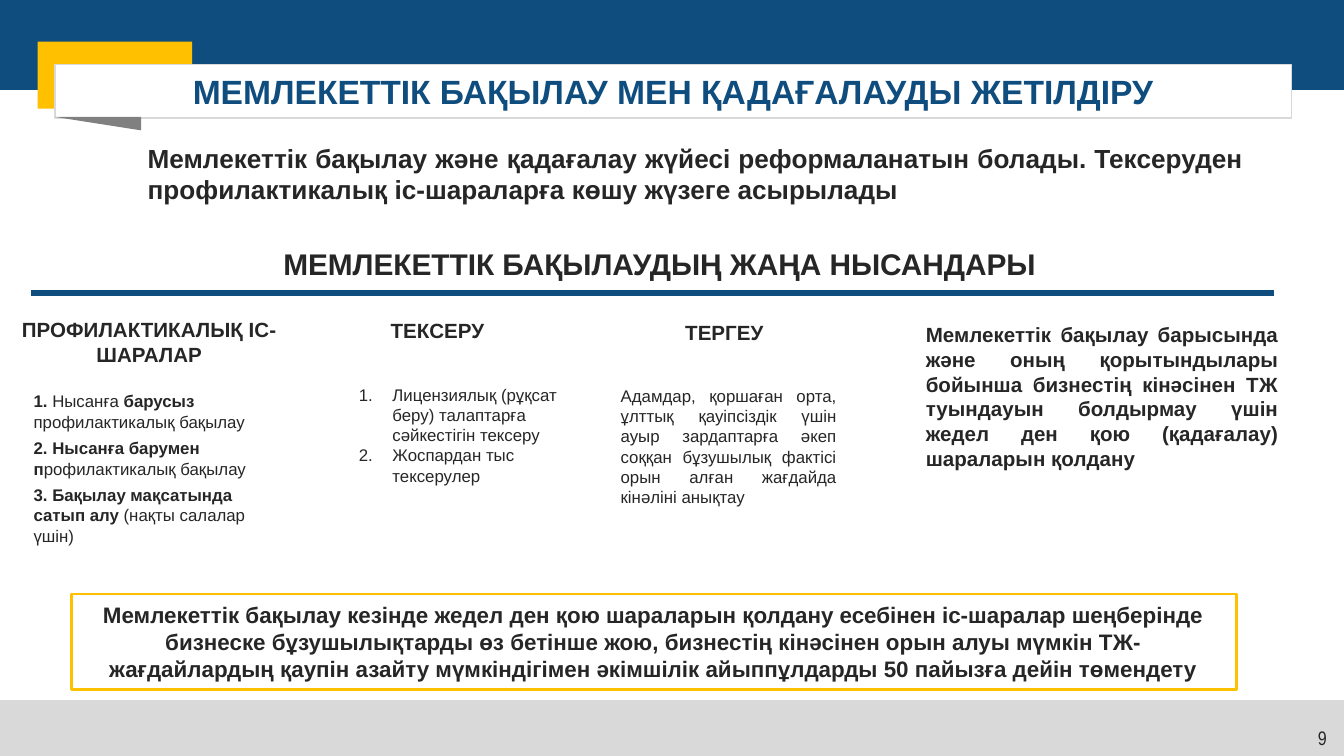
from dataclasses import dataclass

from lxml import etree
from pptx import Presentation
from pptx.dml.color import RGBColor
from pptx.enum.shapes import MSO_CONNECTOR, MSO_SHAPE
from pptx.enum.text import MSO_ANCHOR, MSO_AUTO_SIZE, PP_ALIGN
from pptx.oxml.ns import qn
from pptx.util import Inches, Pt

LEFT, CENTER, RIGHT, JUSTIFY = PP_ALIGN.LEFT, PP_ALIGN.CENTER, PP_ALIGN.RIGHT, PP_ALIGN.JUSTIFY
TOP, MIDDLE = MSO_ANCHOR.TOP, MSO_ANCHOR.MIDDLE
RECTANGLE, TRIANGLE = MSO_SHAPE.RECTANGLE, MSO_SHAPE.RIGHT_TRIANGLE
STRAIGHT = MSO_CONNECTOR.STRAIGHT
TWO_CONTENT_LAYOUT = 3
SLIDE_WIDTH = 10
SLIDE_HEIGHT = SLIDE_WIDTH * 9 / 16


@dataclass(frozen=True)
class Theme:
    blue: str = "104D7F"
    yellow: str = "FFC000"
    light_gray: str = "D9D9D9"
    dark_gray: str = "808080"
    white: str = "FFFFFF"
    text: str = "262626"
    font: str = "Arial"
    number_font: str = "Arial Narrow"
    title: float = 18
    section: float = 16
    lead: float = 14
    callout: float = 12
    heading: float = 11
    number: float = 10.5
    body: float = 9


@dataclass(frozen=True)
class Box:
    left: float
    top: float
    width: float
    height: float

    def inner(self, left, top, width, height):
        return Box(self.left + left, self.top + top, width, height)

    def lengths(self):
        return [Inches(value) for value in (self.left, self.top, self.width, self.height)]


THEME = Theme()


def color(value):
    return RGBColor.from_string(value)


def place(shape, box):
    shape.left, shape.top, shape.width, shape.height = box.lengths()


def add_block(slide, box, fill=None, line=None, line_width=1, preset=RECTANGLE):
    shape = slide.shapes.add_shape(preset, *box.lengths())
    shape.shadow.inherit = False
    paint(shape, fill, line, line_width)
    return shape


def paint(shape, fill, line, line_width):
    if fill:
        shape.fill.solid()
        shape.fill.fore_color.rgb = color(fill)
    else:
        shape.fill.background()
    if line:
        shape.line.color.rgb = color(line)
        shape.line.width = Pt(line_width)
    else:
        shape.line.fill.background()


def write(shape, paragraphs, size, align=LEFT, bold=False, ink=THEME.text,
          font=THEME.font, anchor=TOP, gap=0, numbered=False):
    """Each paragraph is a list of (text, bold) runs, or a plain string."""
    frame = shape.text_frame
    frame.word_wrap = True
    frame.auto_size = MSO_AUTO_SIZE.NONE
    frame.vertical_anchor = anchor
    for index, runs in enumerate(paragraphs):
        paragraph = frame.add_paragraph() if index else frame.paragraphs[0]
        set_list_style(paragraph, numbered)
        paragraph.alignment = align
        paragraph.space_before = Pt(gap if index else 0)
        for text, run_bold in [(runs, bold)] if isinstance(runs, str) else runs:
            run = paragraph.add_run()
            run.text = text
            run.font.name = font
            run.font.size = Pt(size)
            run.font.bold = run_bold
            run.font.color.rgb = color(ink)


def set_list_style(paragraph, numbered):
    properties = paragraph._p.get_or_add_pPr()
    indent = Inches(0.25) if numbered else 0
    properties.set("marL", str(indent))
    properties.set("indent", str(-indent))
    if numbered:
        etree.SubElement(properties, qn("a:buAutoNum"), type="arabicPeriod")
    else:
        etree.SubElement(properties, qn("a:buNone"))


def add_text(slide, box, paragraphs, size, **style):
    write(slide.shapes.add_textbox(*box.lengths()), paragraphs, size, **style)


def add_header(slide, box, title_text):
    add_block(slide, box, THEME.blue)
    add_block(slide, box.inner(0.28, 0.31, 1.15, 0.5), THEME.yellow)
    # Title banner, raised above the blocks behind it
    title = slide.shapes.title
    place(title, box.inner(0.41, 0.48, 9.2, 0.4))
    paint(title, THEME.white, THEME.light_gray, 1)
    write(title, [title_text], THEME.title, align=CENTER, bold=True,
          ink=THEME.blue, anchor=MIDDLE)
    slide.shapes._spTree.append(title._element)
    # Folded corner under the banner
    fold = add_block(slide, box.inner(0.41, 0.87, 0.64, 0.1), THEME.dark_gray, preset=TRIANGLE)
    fold.rotation = 180


def add_section(slide, box, text):
    add_text(slide, box.inner(0.75, 0, 7.86, 0.37), [text], THEME.section,
             align=CENTER, bold=True)
    start, end, level = Inches(box.left), Inches(box.left + box.width), Inches(box.top + box.height)
    rule = slide.shapes.add_connector(STRAIGHT, start, level, end, level)
    rule.line.color.rgb = color(THEME.blue)
    rule.line.width = Pt(3)
    etree.SubElement(rule._element.spPr, qn("a:effectLst"))


def add_column(slide, box, heading, body_box, paragraphs, placeholder=None, **style):
    add_text(slide, box, [heading], THEME.heading, align=CENTER, bold=True)
    body_area = box.inner(*body_box)
    if placeholder is None:
        add_text(slide, body_area, paragraphs, THEME.body, **style)
    else:
        place(placeholder, body_area)
        write(placeholder, paragraphs, THEME.body, **style)


def add_footer(slide, box, number):
    add_block(slide, box, THEME.light_gray)
    add_text(slide, box.inner(7.66, 0.14, 2.33, 0.3), [number], THEME.number,
             align=RIGHT, font=THEME.number_font)


def main():
    presentation = Presentation()
    presentation.slide_width = Inches(SLIDE_WIDTH)
    presentation.slide_height = Inches(SLIDE_HEIGHT)
    slide = presentation.slides.add_slide(presentation.slide_layouts[TWO_CONTENT_LAYOUT])
    first_list, second_list = slide.placeholders[1], slide.placeholders[2]

    add_footer(slide, Box(-0.02, 5.21, 10.04, 0.42), "9")
    add_header(slide, Box(0, 0, 10, 0.67), "МЕМЛЕКЕТТІК БАҚЫЛАУ МЕН ҚАДАҒАЛАУДЫ ЖЕТІЛДІРУ")

    # Lead statement
    add_text(slide, Box(1, 1.01, 8.35, 0.57), [
        "Мемлекеттік бақылау және қадағалау жүйесі реформаланатын болады. "
        "Тексеруден профилактикалық іс-шараларға көшу жүзеге асырылады",
    ], THEME.lead, align=JUSTIFY, bold=True)

    add_section(slide, Box(0.23, 1.78, 9.25, 0.4), "МЕМЛЕКЕТТІК БАҚЫЛАУДЫҢ ЖАҢА НЫСАНДАРЫ")

    # Forms of control
    add_column(slide, Box(0, 2.31, 2.22, 0.47), "ПРОФИЛАКТИКАЛЫҚ ІС-ШАРАЛАР",
               (0.15, 0.55, 1.95, 1.26), [
                   [("1. ", True), ("Нысанға ", False), ("барусыз", True),
                    (" профилактикалық бақылау", False)],
                   [("2. Нысанға барумен п", True), ("рофилактикалық бақылау", False)],
                   [("3. Бақылау мақсатында сатып алу", True), (" (нақты салалар үшін)", False)],
               ], first_list, gap=3.5)
    add_column(slide, Box(2.45, 2.32, 1.61, 0.29), "ТЕКСЕРУ", (0.12, 0.49, 1.8, 0.86), [
        "Лицензиялық (рұқсат беру) талаптарға сәйкестігін тексеру",
        "Жоспардан тыс тексерулер",
    ], second_list, numbered=True)
    add_column(slide, Box(4.52, 2.33, 1.74, 0.29), "ТЕРГЕУ", (0, 0.49, 1.8, 1.01), [
        "Адамдар, қоршаған орта, ұлттық қауіпсіздік үшін ауыр зардаптарға әкеп "
        "соққан бұзушылық фактісі орын алған жағдайда кінәліні анықтау",
    ], align=JUSTIFY)

    # Rapid response measures
    add_text(slide, Box(6.79, 2.35, 2.82, 1.21), [
        "Мемлекеттік бақылау барысында және оның қорытындылары бойынша бизнестің "
        "кінәсінен ТЖ туындауын болдырмау үшін жедел ден қою (қадағалау) шараларын қолдану",
    ], THEME.heading, align=JUSTIFY, bold=True)

    # Framed conclusion
    callout = add_block(slide, Box(0.53, 4.42, 8.67, 0.71), line=THEME.yellow, line_width=1.5)
    write(callout, [
        "Мемлекеттік бақылау кезінде жедел ден қою шараларын қолдану есебінен іс-шаралар "
        "шеңберінде бизнеске бұзушылықтарды өз бетінше жою, бизнестің кінәсінен орын алуы "
        "мүмкін ТЖ-жағдайлардың қаупін азайту мүмкіндігімен әкімшілік айыппұлдарды "
        "50 пайызға дейін төмендету",
    ], THEME.callout, align=CENTER, bold=True, anchor=MIDDLE)

    presentation.save("out.pptx")


if __name__ == "__main__":
    main()
